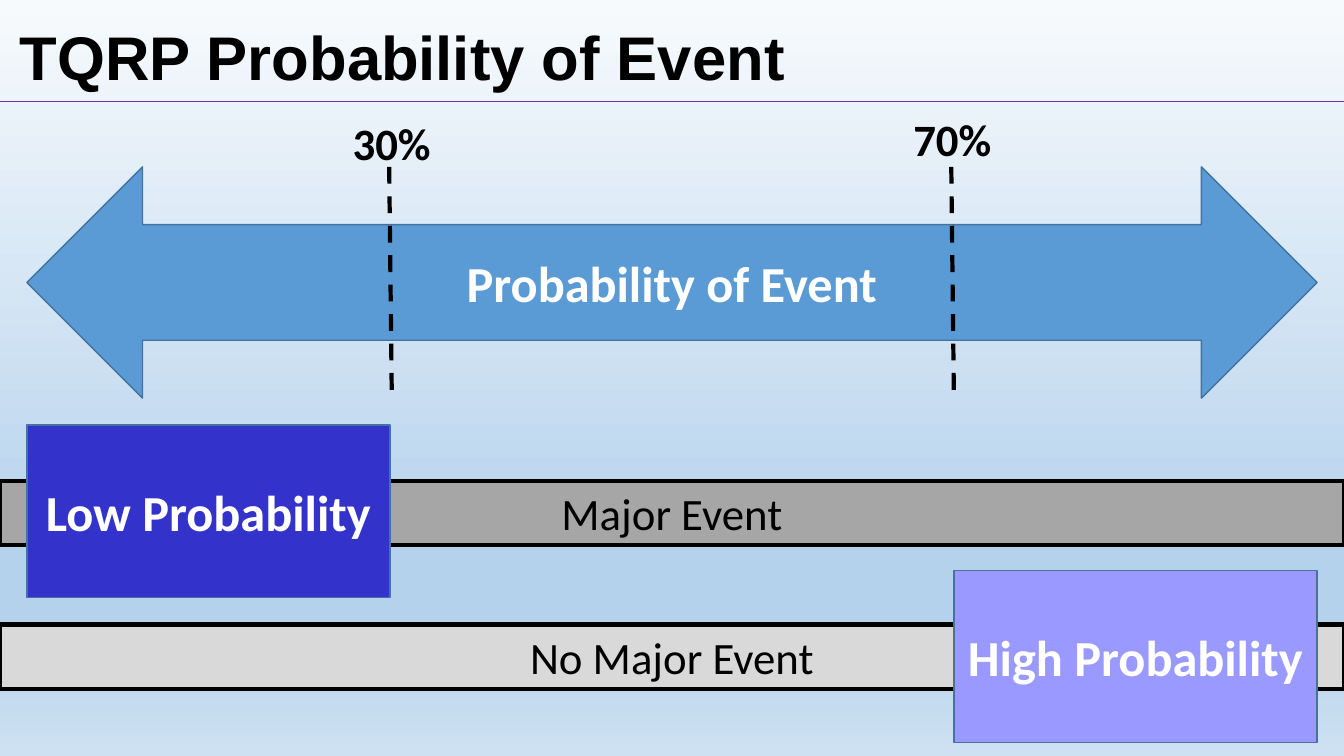
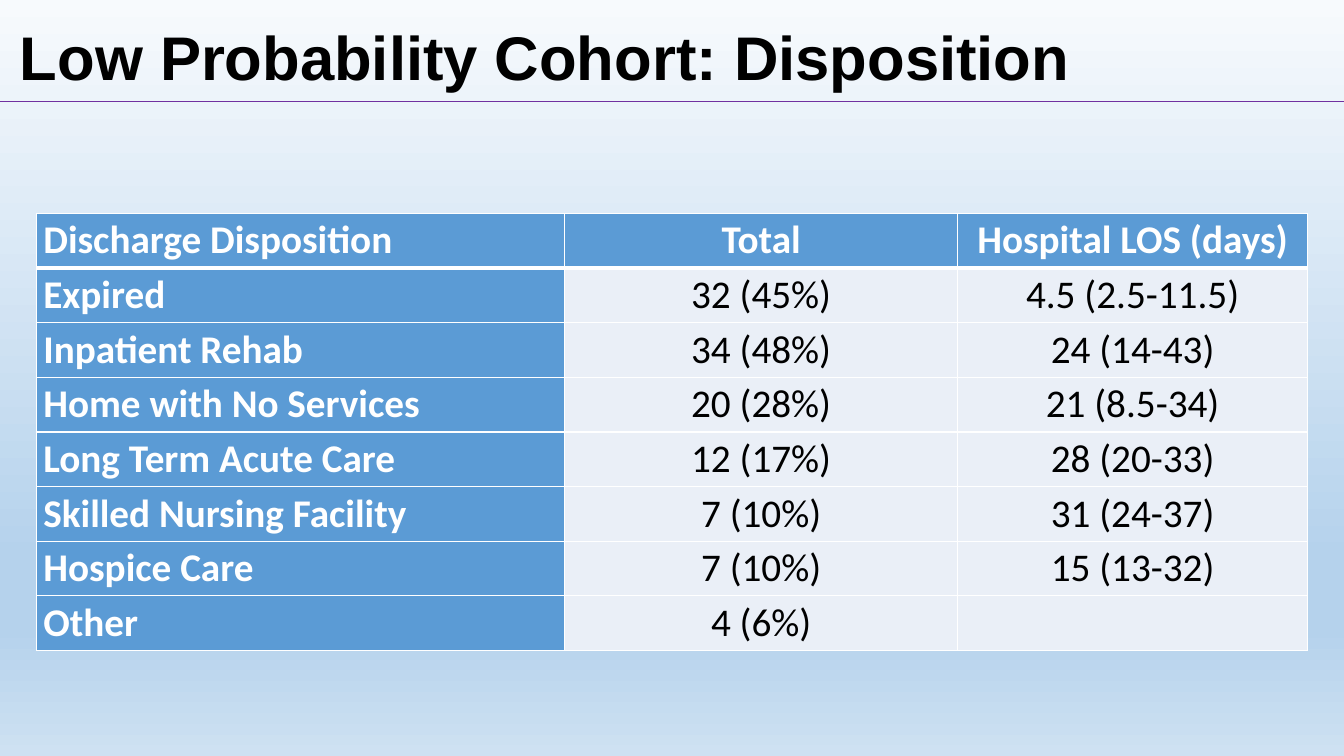
from lxml import etree
from pptx import Presentation
from pptx.dml.color import RGBColor
from pptx.enum import dml, shapes, text
from pptx.oxml.ns import qn
from pptx.util import Pt

# Shared look
WIDTH, HEIGHT = 960, 540
BLACK, WHITE, BLUE, EDGE = "000000", "FFFFFF", "5B9BD5", "43739E"
RULE, PALE = "7030A0", "EAEFF7"
BACKGROUND = [(0, "F7FAFD"), (74, "B5D2EC"), (83, "B5D2EC"), (100, "CEE1F2")]
MARGIN = 19.2
RECT, ARROW = shapes.MSO_SHAPE.RECTANGLE, shapes.MSO_SHAPE.LEFT_RIGHT_ARROW
LEFT, CENTER = text.PP_ALIGN.LEFT, text.PP_ALIGN.CENTER
TOP, MIDDLE = text.MSO_ANCHOR.TOP, text.MSO_ANCHOR.MIDDLE

# Slide 1: label, top, fill
EVENT_TITLE = "TQRP Probability of Event"
BARS = [("Major Event", 343.4, "A6A6A6"), ("No Major Event", 446, "D9D9D9")]
BOX_WIDTH, BOX_HEIGHT = 259.4, 123.2
# label, left, top, fill
BOXES = [("Low Probability", MARGIN, 303.6, "3333CC"),
         ("High Probability", WIDTH - MARGIN - BOX_WIDTH, 407.4, "9999FF")]
# label, label left, label top, line start x, line end x
CUTOFFS = [("30%", 244.8, 79.4, 278, 279.9), ("70%", 645.3, 76.2, 679.5, 681.4)]

# Slide 2
TABLE_TITLE = "Low Probability Cohort: Disposition"
ROWS = [
    ("Discharge Disposition", "Total", "Hospital LOS (days)"),
    ("Expired", "32 (45%)", "4.5 (2.5-11.5)"),
    ("Inpatient Rehab", "34 (48%)", "24 (14-43)"),
    ("Home with No Services", "20 (28%)", "21 (8.5-34)"),
    ("Long Term Acute Care", "12 (17%)", "28 (20-33)"),
    ("Skilled Nursing Facility", "7 (10%)", "31 (24-37)"),
    ("Hospice Care", "7 (10%)", "15 (13-32)"),
    ("Other", "4 (6%)", ""),
]
COLUMN_WIDTHS = [377.2, 281, 249.7]
ROW_HEIGHT = 39.06


def color(value):
    return RGBColor.from_string(value)


def write(frame, words, size=32, font="Calibri", ink=BLACK, bold=False,
          align=LEFT, anchor=TOP, spacing=None, wrap=True):
    frame.word_wrap = wrap
    frame.vertical_anchor = anchor
    para = frame.paragraphs[0]
    para.alignment = align
    para.line_spacing = spacing
    para.font.size = Pt(size)
    if words:
        span = para.add_run()
        span.text = words
        span.font.size, span.font.name, span.font.bold = Pt(size), font, bold
        span.font.color.rgb = color(ink)


def add_text(page, words, left, top, width, height, **style):
    box = page.shapes.add_textbox(Pt(left), Pt(top), Pt(width), Pt(height))
    write(box.text_frame, words, **style)


def add_block(page, kind, words, left, top, width, height, fill, edge, weight, **style):
    block = page.shapes.add_shape(kind, Pt(left), Pt(top), Pt(width), Pt(height))
    block.shadow.inherit = False
    block.fill.solid()
    block.fill.fore_color.rgb = color(fill)
    block.line.color.rgb = color(edge)
    block.line.width = Pt(weight)
    write(block.text_frame, words, align=CENTER, **style)


def add_line(page, x1, y1, x2, y2, ink, weight, dash=None):
    line = page.shapes.add_connector(shapes.MSO_CONNECTOR.STRAIGHT,
                                     Pt(x1), Pt(y1), Pt(x2), Pt(y2))
    line.line.color.rgb = color(ink)
    line.line.width = Pt(weight)
    if dash:
        line.line.dash_style = dash
    etree.SubElement(line.element.spPr, qn("a:effectLst"))


def set_background(master):
    fill = master.background.fill
    fill.gradient()
    fill.gradient_angle = 270
    stops = next(master.element.iter(qn("a:gsLst")))
    for stop in list(stops):
        stops.remove(stop)
    for percent, value in BACKGROUND:
        stop = etree.SubElement(stops, qn("a:gs"), pos=str(percent * 1000))
        etree.SubElement(stop, qn("a:srgbClr"), val=value)


def set_borders(cell, bottom, top):
    props = cell._tc.get_or_add_tcPr()
    widths = {"a:lnL": 1, "a:lnR": 1, "a:lnT": top, "a:lnB": bottom}
    for index, (side, weight) in enumerate(widths.items()):
        border = etree.Element(qn(side), w=str(Pt(weight)))
        solid = etree.SubElement(border, qn("a:solidFill"))
        etree.SubElement(solid, qn("a:srgbClr"), val=WHITE)
        props.insert(index, border)


def add_page(deck, title):
    page = deck.slides.add_slide(deck.slide_layouts[6])
    add_text(page, title, 7.2, 10, 828, 66, size=44, font="Arial", bold=True,
             anchor=MIDDLE, spacing=0.9)
    add_line(page, 0, 72.5, WIDTH, 72.5, RULE, 1)
    return page


def build_event_page(deck):
    page = add_page(deck, EVENT_TITLE)
    strong = dict(size=36, ink=WHITE, bold=True, anchor=MIDDLE)
    add_block(page, ARROW, "Probability of Event", MARGIN, 119.2,
              WIDTH - 2 * MARGIN, 165.2, BLUE, EDGE, 1, **strong)
    # Event bars, then the probability boxes over them
    for words, top, fill in BARS:
        add_block(page, RECT, words, 0, top, WIDTH, 46, fill, BLACK, 3)
    for words, left, top, fill in BOXES:
        add_block(page, RECT, words, left, top, BOX_WIDTH, BOX_HEIGHT,
                  fill, EDGE, 1, **strong)
    # Cutoffs across the arrow
    for words, left, top, start, end in CUTOFFS:
        add_line(page, start, 119.2, end, 286.5, BLACK, 3, dml.MSO_LINE.DASH)
        add_text(page, words, left, top, 71.2, 46, bold=True, wrap=False)


def build_table_page(deck):
    page = add_page(deck, TABLE_TITLE)
    table = page.shapes.add_table(
        len(ROWS), len(COLUMN_WIDTHS), Pt(26), Pt(152.4),
        Pt(sum(COLUMN_WIDTHS)), Pt(ROW_HEIGHT * len(ROWS))).table
    for column, width in zip(table.columns, COLUMN_WIDTHS):
        column.width = Pt(width)
    for r, row in enumerate(ROWS):
        table.rows[r].height = Pt(ROW_HEIGHT)
        for c, words in enumerate(row):
            cell = table.cell(r, c)
            heading = r == 0 or c == 0
            cell.margin_left = cell.margin_right = Pt(5)
            cell.margin_top = cell.margin_bottom = 0
            cell.fill.solid()
            cell.fill.fore_color.rgb = color(BLUE if heading else PALE)
            set_borders(cell, bottom=3 if r == 0 else 1, top=3 if r == 1 else 1)
            write(cell.text_frame, words, size=28, bold=heading,
                  ink=WHITE if heading else BLACK,
                  align=CENTER if c else LEFT, spacing=1.07)


def main():
    deck = Presentation()
    deck.slide_width, deck.slide_height = Pt(WIDTH), Pt(HEIGHT)
    set_background(deck.slide_master)
    build_event_page(deck)
    build_table_page(deck)
    deck.save("out.pptx")


if __name__ == "__main__":
    main()
